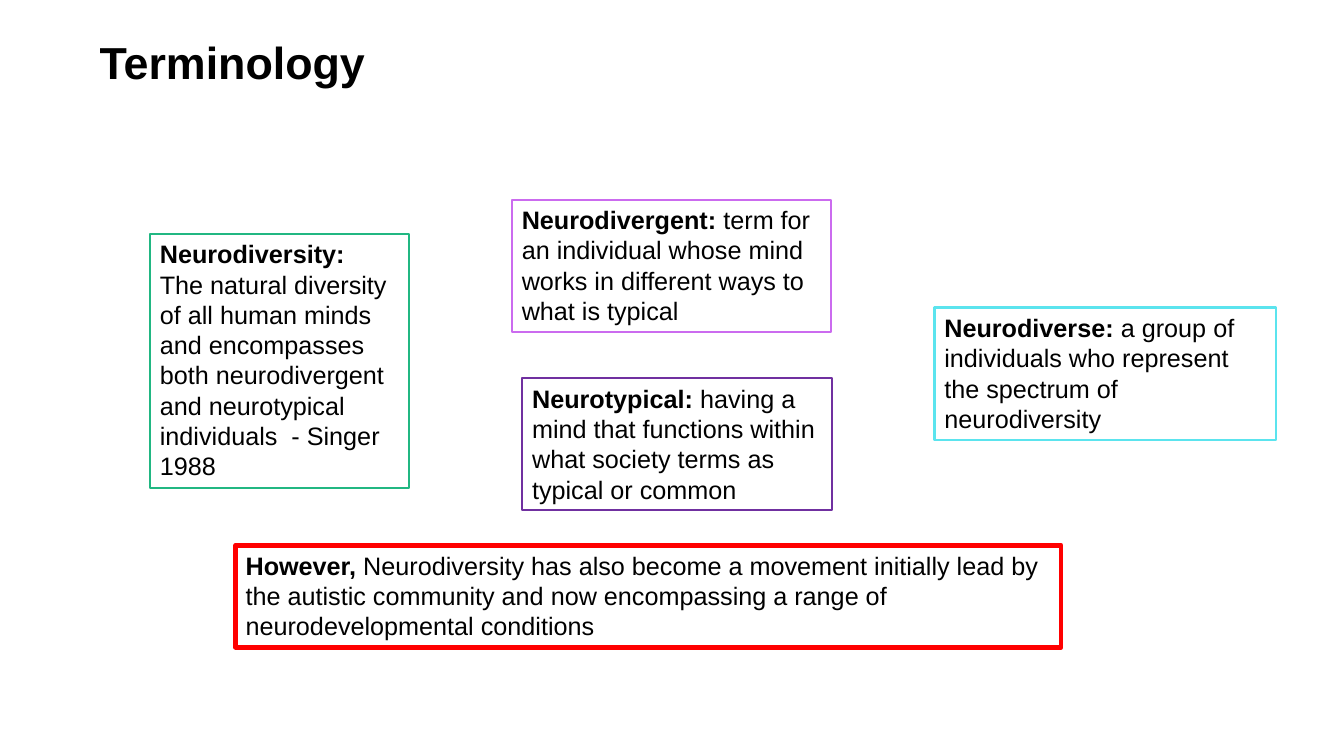
from pptx import Presentation
from pptx import util as u
from pptx.dml.color import RGBColor
from pptx.enum import shapes, text

FONT = "Arial"
BLACK = "000000"

DEFINITIONS = [
    ((3.78, 5.89, 6.53, 6.4), "21B782", 1.5, [
        [("Neurodiversity:", True)],
        [("The natural diversity of all human minds and encompasses both "
          "neurodivergent and neurotypical individuals  - Singer 1988", False)],
    ]),
    ((12.9, 5.03, 8.05, 3.33), "CB6BEF", 1.5, [
        [("Neurodivergent: ", True),
         ("term for an individual whose mind works in different ways to "
          "what is typical", False)],
    ]),
    ((13.16, 9.53, 7.8, 3.33), "7030A0", 1.5, [
        [("Neurotypical: ", True),
         ("having a mind that functions within what society terms as "
          "typical or common", False)],
    ]),
    ((23.55, 7.75, 8.61, 3.33), "5BE4EE", 1.5, [
        [("Neurodiverse: ", True),
         ("a group of individuals who represent the spectrum of "
          "neurodiversity", False)],
    ]),
    ((5.94, 13.74, 20.8, 2.57), "FF0000", 3.5, [
        [("However, ", True),
         ("Neurodiversity has also become a movement initially lead by the "
          "autistic community and now encompassing a range of "
          "neurodevelopmental conditions", False)],
    ]),
]


def colour(value):
    return RGBColor.from_string(value)


def add_span(para, words, size=18, bold=False, ink=BLACK):
    span = para.add_run()
    span.text = words
    span.font.name = FONT
    span.font.size = u.Pt(size)
    span.font.bold = bold
    span.font.color.rgb = colour(ink)


def add_title(page, words):
    box = page.shapes.add_textbox(u.Cm(2.26), u.Cm(0.91), u.Cm(29.34), u.Cm(3.45))
    frame = box.text_frame
    frame.word_wrap = True
    frame.vertical_anchor = text.MSO_ANCHOR.TOP
    para = frame.paragraphs[0]
    para.line_spacing = 0.9
    add_span(para, words, size=32, bold=True)


def add_definition(page, place, outline, weight, paragraphs):
    box = page.shapes.add_shape(shapes.MSO_SHAPE.RECTANGLE, *map(u.Cm, place))
    box.shadow.inherit = False
    box.fill.background()
    box.line.color.rgb = colour(outline)
    box.line.width = u.Pt(weight)
    frame = box.text_frame
    frame.word_wrap = True
    frame.auto_size = text.MSO_AUTO_SIZE.SHAPE_TO_FIT_TEXT
    frame.vertical_anchor = text.MSO_ANCHOR.TOP
    for index, spans in enumerate(paragraphs):
        para = frame.add_paragraph() if index else frame.paragraphs[0]
        para.alignment = text.PP_ALIGN.LEFT
        for words, bold in spans:
            add_span(para, words, bold=bold)


def main():
    deck = Presentation()
    deck.slide_width = u.Cm(33.87)
    deck.slide_height = u.Cm(19.05)
    page = deck.slides.add_slide(deck.slide_layouts[6])
    add_title(page, "Terminology")
    for definition in DEFINITIONS:
        add_definition(page, *definition)
    deck.save("out.pptx")


if __name__ == "__main__":
    main()
